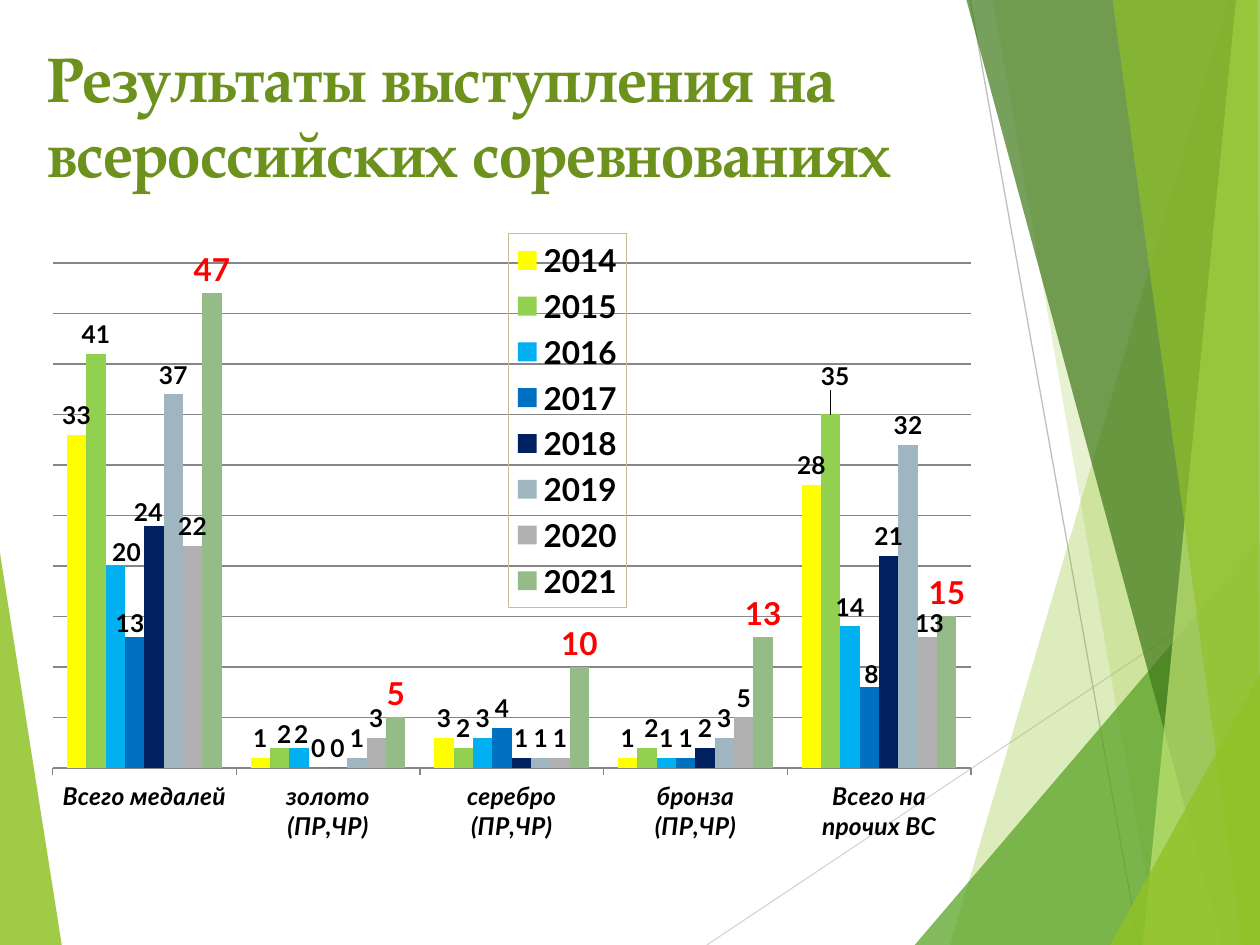
"""Build a slide with a clustered column chart of medal results by year."""
from dataclasses import dataclass

from lxml import etree
from pptx import Presentation
from pptx.chart.data import CategoryChartData
from pptx.dml.color import RGBColor
from pptx.enum.chart import XL_CHART_TYPE, XL_LABEL_POSITION, XL_LEGEND_POSITION, XL_TICK_LABEL_POSITION, XL_TICK_MARK
from pptx.enum.shapes import MSO_CONNECTOR
from pptx.enum.text import MSO_ANCHOR, MSO_AUTO_SIZE, PP_ALIGN
from pptx.oxml import parse_xml
from pptx.oxml.ns import nsdecls, qn
from pptx.util import Inches, Pt

COLUMNS = XL_CHART_TYPE.COLUMN_CLUSTERED
OUTSIDE = XL_LABEL_POSITION.OUTSIDE_END
RIGHT = XL_LEGEND_POSITION.RIGHT
LOW = XL_TICK_LABEL_POSITION.LOW
TICK_OUT, TICK_NONE = XL_TICK_MARK.OUTSIDE, XL_TICK_MARK.NONE
STRAIGHT = MSO_CONNECTOR.STRAIGHT
TOP, NO_FIT, LEFT = MSO_ANCHOR.TOP, MSO_AUTO_SIZE.NONE, PP_ALIGN.LEFT


@dataclass(frozen=True)
class Theme:
    title_font: str = "TeX Gyre Pagella"
    body_font: str = "Lato"
    title_size: int = 36
    legend_size: int = 18
    label_size: int = 14
    title: str = "6C921D"
    text: str = "000000"
    accent: str = "FF0000"
    grid: str = "868686"
    legend_line: str = "C4BD97"
    lime: str = "90C226"
    green: str = "54A021"
    forest: str = "3F7819"
    pale: str = "C0E474"


@dataclass(frozen=True)
class Facet:
    points: tuple
    color: str
    opacity: int


@dataclass(frozen=True)
class Ray:
    start: tuple
    end: tuple
    color: str


@dataclass(frozen=True)
class Year:
    name: str
    values: tuple
    color: str
    label_color: str
    label_size: int


THEME = Theme()
RAYS = (
    Ray((5.61, 7.5), (10, 4.57), "D9D9D9"),
    Ray((7.7, 0), (9.04, 7.5), "BFBFBF"),
)
LEFT_FACET = Facet(((0, 4.39), (0.49, 7.5), (0, 7.5)), THEME.lime, 85)
RIGHT_FACETS = (
    Facet(((9.75, 0), (7.54, 7.5), (10, 7.5), (10, 0)), THEME.lime, 30),
    Facet(((7.88, 0), (9.19, 7.5), (10, 7.5), (10, 0)), THEME.lime, 20),
    Facet(((7.26, 7.5), (10, 4.29), (10, 7.5)), THEME.green, 72),
    Facet(((7.67, 0), (9.7, 7.5), (10, 7.5), (10, 0)), THEME.forest, 70),
    Facet(((9.81, 0), (9.07, 7.5), (10, 7.5), (10, 0)), THEME.pale, 70),
    Facet(((8.83, 0), (9.86, 7.5), (10, 7.5), (9.98, 0)), THEME.lime, 65),
    Facet(((8.81, 7.5), (10, 5.35), (10, 7.5)), THEME.lime, 80),
)
CATEGORIES = ("Всего медалей", "золото\n(ПР,ЧР)", "серебро\n(ПР,ЧР)", "бронза\n(ПР,ЧР)", "Всего на прочих ВС")
MEDALS = (
    ("2014", (33, 1, 3, 1, 28), "FFFF00"),
    ("2015", (41, 2, 2, 2, 35), "92D050"),
    ("2016", (20, 2, 3, 1, 14), "00B0F0"),
    ("2017", (13, 0, 4, 1, 8), "0070C0"),
    ("2018", (24, 0, 1, 2, 21), "002060"),
    ("2019", (37, 1, 1, 3, 32), "9FB6C0"),
    ("2020", (22, 3, 1, 5, 13), "B0B0B0"),
)
YEARS = [Year(*row, THEME.text, THEME.label_size) for row in MEDALS]
YEARS.append(Year("2021", (47, 5, 10, 13, 15), "95BB88", THEME.accent, THEME.legend_size))
LABEL_SHIFTS = {
    ("2015", 1): (0.004, 0.01),
    ("2015", 3): (0.004, 0),
    ("2015", 4): (0.004, -0.03),
    ("2016", 0): (0.01, 0.01),
    ("2016", 1): (0.002, 0.01),
    ("2017", 0): (-0.004, 0.01),
    ("2017", 4): (0.002, 0.01),
    ("2018", 0): (-0.005, 0.01),
    ("2020", 4): (0.002, 0.01),
}


def style_font(font, *, size: int, color: str, name: str = THEME.body_font, bold: bool = True, italic: bool = False) -> None:
    """Apply one type style to a font."""
    font.name, font.size, font.bold, font.italic = name, Pt(size), bold, italic
    font.color.rgb = RGBColor.from_string(color)


def write_text(tf, text: str, **style) -> None:
    """Write one left-aligned paragraph with the given font style."""
    p = tf.paragraphs[0]
    p.alignment = LEFT
    r = p.add_run()
    r.text = text
    style_font(r.font, **style)


def draw_facet(slide, facet: Facet) -> None:
    """Draw a translucent polygon."""
    first, *rest = [(Inches(x), Inches(y)) for x, y in facet.points]
    builder = slide.shapes.build_freeform(*first, scale=1.0)
    builder.add_line_segments(rest, close=True)
    sp = builder.convert_to_shape()
    sp.shadow.inherit = False
    sp.line.fill.background()
    sp.fill.solid()
    sp.fill.fore_color.rgb = RGBColor.from_string(facet.color)
    color = sp._element.spPr.find(".//" + qn("a:srgbClr"))
    etree.SubElement(color, qn("a:alpha"), val=str(facet.opacity * 1000))


def draw_ray(slide, ray: Ray) -> None:
    """Draw a thin background line."""
    ends = [Inches(v) for v in ray.start + ray.end]
    line = slide.shapes.add_connector(STRAIGHT, *ends)
    line.line.color.rgb = RGBColor.from_string(ray.color)
    line.line.width = Pt(0.75)
    etree.SubElement(line._element.spPr, qn("a:effectLst"))


def layout_xml(x: float, y: float, size: tuple = (), inner: bool = False):
    """Return a manual chart layout; without a size it is an offset."""
    target = '<c:layoutTarget val="inner"/>' if inner else ""
    modes = '<c:xMode val="edge"/><c:yMode val="edge"/>' if size else ""
    extent = "".join(f'<c:{tag} val="{v}"/>' for tag, v in zip("wh", size))
    return parse_xml(
        f'<c:layout {nsdecls("c")}><c:manualLayout>{target}{modes}'
        f'<c:x val="{x}"/><c:y val="{y}"/>{extent}</c:manualLayout></c:layout>'
    )


def style_series(series, year: Year) -> None:
    """Colour a series, label it and shift its crowded labels."""
    series.format.fill.solid()
    series.format.fill.fore_color.rgb = RGBColor.from_string(year.color)
    labels = series.data_labels
    labels.show_value = True
    labels.position = OUTSIDE
    style_font(labels.font, size=year.label_size, color=year.label_color)
    for (name, idx), shift in LABEL_SHIFTS.items():
        if name == year.name:
            label = series.points[idx].data_label
            style_font(label.font, size=year.label_size, color=year.label_color)
            label.position = OUTSIDE
            for node in series._element.iter(qn("c:dLbl")):
                mark = node.find(qn("c:idx"))
                if mark.get("val") == str(idx):
                    mark.addnext(layout_xml(*shift))


def style_legend(chart) -> None:
    """Place the outlined legend over the plot."""
    chart.has_legend = True
    legend = chart.legend
    legend.position = RIGHT
    legend.include_in_layout = False
    style_font(legend.font, size=THEME.legend_size, color=THEME.text)
    node = legend._element
    for old in node.findall(qn("c:layout")):
        node.remove(old)
    node.find(qn("c:legendPos")).addnext(layout_xml(0.485, 0.015, (0.104, 0.6)))
    node.find(qn("c:overlay")).addnext(parse_xml(
        f'<c:spPr {nsdecls("c", "a")}><a:noFill/><a:ln w="9525"><a:solidFill>'
        f'<a:srgbClr val="{THEME.legend_line}"/></a:solidFill></a:ln></c:spPr>'
    ))


def add_medal_chart(slide) -> None:
    """Add the medal chart with its axes, legend and labels."""
    data = CategoryChartData()
    data.categories = CATEGORIES
    for year in YEARS:
        data.add_series(year.name, year.values)
    box = [Inches(v) for v in (-0.33, 1.78, 9, 4.95)]
    chart = slide.shapes.add_chart(COLUMNS, *box, data).chart
    chart.has_title = False
    style_font(chart.font, size=THEME.legend_size, color=THEME.text, bold=False)
    plot = chart.plots[0]
    plot.gap_width, plot.overlap, plot.vary_by_categories = 150, 0, False
    for series, year in zip(plot.series, YEARS):
        style_series(series, year)
    cat, val = chart.category_axis, chart.value_axis
    cat.major_tick_mark, cat.minor_tick_mark = TICK_OUT, TICK_NONE
    cat.tick_label_position = LOW
    style_font(cat.tick_labels.font, size=THEME.label_size, color=THEME.text, italic=True)
    val.visible, val.has_major_gridlines = False, True
    val.minimum_scale, val.maximum_scale, val.major_unit = 0, 50, 5
    for line in (cat.format.line, val.major_gridlines.format.line):
        line.color.rgb = RGBColor.from_string(THEME.grid)
        line.width = Pt(0.75)
    area = chart._chartSpace.find(".//" + qn("c:plotArea"))
    for old in area.findall(qn("c:layout")):
        area.remove(old)
    area.insert(0, layout_xml(0.083, 0.062, (0.81, 0.81), inner=True))
    style_legend(chart)


def main() -> None:
    """Build and save the presentation."""
    prs = Presentation()
    prs.slide_width, prs.slide_height = Inches(10), Inches(7.5)
    slide = prs.slides.add_slide(prs.slide_layouts[5])
    draw_facet(slide, LEFT_FACET)
    for ray in RAYS:
        draw_ray(slide, ray)
    for facet in RIGHT_FACETS:
        draw_facet(slide, facet)
    title = slide.shapes.title
    slide.shapes._spTree.append(title._element)
    title.left, title.top, title.width, title.height = [Inches(v) for v in (0.28, 0.26, 7.8, 2.2)]
    tf = title.text_frame
    tf.word_wrap, tf.auto_size, tf.vertical_anchor = True, NO_FIT, TOP
    write_text(tf, "Результаты выступления на всероссийских соревнованиях",
               size=THEME.title_size, color=THEME.title, name=THEME.title_font)
    add_medal_chart(slide)
    prs.save("out.pptx")


if __name__ == "__main__":
    main()
